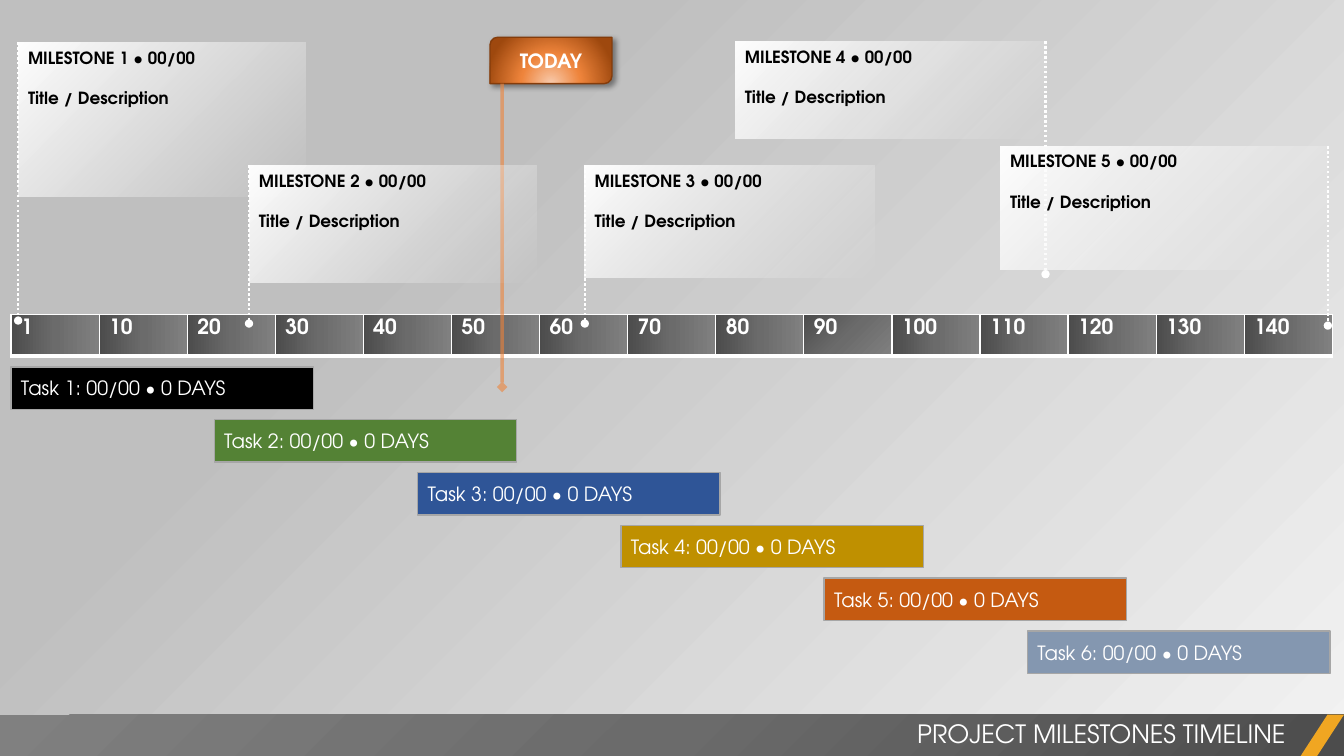
import pptx
import pptx.util
import pptx.oxml
import pptx.oxml.ns
import pptx.dml.color
import pptx.enum.dml
import pptx.enum.shapes
import pptx.enum.text

Inches = pptx.util.Inches
Pt = pptx.util.Pt
qn = pptx.oxml.ns.qn
SHAPE = pptx.enum.shapes.MSO_SHAPE
ALIGN = pptx.enum.text.PP_ALIGN
ANCHOR = pptx.enum.text.MSO_ANCHOR
DASH = pptx.enum.dml.MSO_LINE

FONT = "TeX Gyre Adventor"
NS = pptx.oxml.ns.nsdecls("a")
DARK = [(0, "4C4C4C", 100), (50, "6B6B6B", 100), (100, "808080", 100)]
FADE = [(0, "F2F2F2", 0), (100, "FFFFFF", 100)]


def rgb(value):
    return pptx.dml.color.RGBColor.from_string(value)


def xml(markup):
    """Element from markup whose root tag is left open for the namespace."""
    tag, rest = markup.split("|", 1)
    return pptx.oxml.parse_xml(f"<{tag} {NS}{rest}")


def gradient(owner, stops, angle=0, center=None):
    """Replace the empty fill of owner by a linear or circular gradient."""
    gs = "".join(
        f'<a:gs pos="{pos * 1000}"><a:srgbClr val="{color}">'
        f'<a:alpha val="{alpha * 1000}"/></a:srgbClr></a:gs>'
        for pos, color, alpha in stops)
    if center:
        sides = " ".join(f'{side}="{v * 1000}"' for side, v in zip("ltrb", center))
        way = f'<a:path path="circle"><a:fillToRect {sides}/></a:path>'
    else:
        way = f'<a:lin ang="{angle * 60000}" scaled="0"/>'
    empty = next(owner.iter(qn("a:noFill")))
    empty.getparent().replace(
        empty, xml(f"a:gradFill|><a:gsLst>{gs}</a:gsLst>{way}</a:gradFill>"))


def add_box(s, kind, x, y, w, h, fill=None, line=None):
    sp = s.shapes.add_shape(kind, Inches(x), Inches(y), Inches(w), Inches(h))
    sp.shadow.inherit = False
    if fill:
        sp.fill.solid()
        sp.fill.fore_color.rgb = rgb(fill)
    else:
        sp.fill.background()
    if line:
        sp.line.color.rgb = rgb(line)
        sp.line.width = Pt(1)
    else:
        sp.line.fill.background()
    return sp


def add_line(s, x, y1, y2, color, width, end, dash=None, alpha=100):
    cx = s.shapes.add_connector(pptx.enum.shapes.MSO_CONNECTOR.STRAIGHT,
                                Inches(x), Inches(y1), Inches(x), Inches(y2))
    cx.line.color.rgb = rgb(color)
    cx.line.width = Pt(width)
    if dash:
        cx.line.dash_style = dash
    next(cx.element.iter(qn("a:srgbClr"))).append(
        xml(f'a:alpha| val="{alpha * 1000}"/>'))
    next(cx.element.iter(qn("a:ln"))).append(xml(f'a:tailEnd| type="{end}"/>'))
    cx.element.spPr.append(xml("a:effectLst|/>"))


def write(tf, lines, size, color, bold=False, align=ALIGN.LEFT, gap=0):
    tf.word_wrap = True
    for i, text in enumerate(lines):
        p = tf.add_paragraph() if i else tf.paragraphs[0]
        p.alignment = align
        if i:
            p.space_before = Pt(gap)
        r = p.add_run()
        r.text = text
        r.font.name = FONT
        r.font.size = Pt(size)
        r.font.bold = bold
        r.font.color.rgb = rgb(color)


def add_text(s, x, y, w, h, *args, **kwargs):
    tb = s.shapes.add_textbox(Inches(x), Inches(y), Inches(w), Inches(h))
    write(tb.text_frame, *args, **kwargs)


def add_tasks(s, x, y, w, h):
    """Staircase of task bars inside the given box."""
    colors = ["000000", "548235", "2F5597", "BF9000", "C55A11", "8497B0"]
    bar_w, bar_h = 3, 0.42
    dx, dy = (w - bar_w) / (len(colors) - 1), (h - bar_h) / (len(colors) - 1)
    for i, color in enumerate(colors):
        sp = add_box(s, SHAPE.RECTANGLE, x + i * dx, y + i * dy,
                     bar_w, bar_h, color, "A6A6A6")
        sp.text_frame.vertical_anchor = ANCHOR.MIDDLE
        write(sp.text_frame, [f"Task {i + 1}: 00/00 • 0 DAYS"], 14, "FFFFFF")


def add_scale(s, x, y, w, h):
    """Day scale as a one-row table."""
    days = [1, *range(10, 150, 10)]
    frame = s.shapes.add_table(1, len(days), Inches(x), Inches(y),
                               Inches(w), Inches(h))
    table = frame.table
    table.first_row = table.horz_banding = False
    for col, day in zip(table.columns, days):
        col.width = Inches(w / len(days))
    for cell, day in zip(table.rows[0].cells, days):
        write(cell.text_frame, [str(day)], 15, "FFFFFF", bold=True)
        cell.fill.background()
    for tc_pr, day in zip(frame.element.iter(qn("a:tcPr")), days):
        gradient(tc_pr, DARK, 45 if day == 90 else 0)
        for i, (side, width) in enumerate(zip("LRTB", (1, 1, 1, 3))):
            tc_pr.insert(i, xml(
                f'a:ln{side}| w="{width * 12700}"><a:solidFill>'
                f'<a:srgbClr val="FFFFFF"/></a:solidFill></a:ln{side}>'))


def add_today(s, x, y, w, h):
    """Flag for the current day with its pointer."""
    sp = add_box(s, SHAPE.ROUND_2_DIAG_RECTANGLE, x, y, w, h, line="843C0B")
    gradient(sp.element, [(0, "F8CBAD", 100), (46, "EE843B", 100),
                          (100, "9E480E", 100)], center=(50, 130, 50, -30))
    next(sp.element.iter(qn("a:effectLst"))).append(xml(
        f'a:outerShdw| blurRad="{Pt(4)}" dist="{Pt(3)}" dir="2700000" algn="tl">'
        '<a:srgbClr val="000000"><a:alpha val="40000"/></a:srgbClr></a:outerShdw>'))
    sp.text_frame.vertical_anchor = ANCHOR.MIDDLE
    write(sp.text_frame, ["TODAY"], 14, "FFFFFF", bold=True, align=ALIGN.CENTER)
    add_line(s, x + 0.12, y + h, 3.84, "EE843B", 2.5, "diamond", alpha=60)


def add_milestone(s, number, x, y, w, h, line_x, line_end):
    """Fading card with its dotted marker line."""
    card = add_box(s, SHAPE.ROUNDED_RECTANGLE, x, y, w, h)
    card.adjustments[0] = 0
    gradient(card.element, FADE, 225)
    add_text(s, x, y, w, 0.71,
             [f"MILESTONE {number} • 00/00", "Title / Description"],
             12, "000000", bold=True, gap=14.4)
    add_line(s, line_x, y, line_end, "FFFFFF", 1.75, "oval", DASH.ROUND_DOT)


def add_footer(s, x, y, w, h):
    """Title bar with its slanted accent."""
    bar = add_box(s, SHAPE.RECTANGLE, x, y, w, h)
    gradient(bar.element, DARK, center=(100, 100, 0, 0))
    accent = add_box(s, SHAPE.PARALLELOGRAM, x + w - 0.43, y, 0.43, h, "F0A622")
    accent.adjustments[0] = 0.65
    add_text(s, x + w - 8.08, y - 0.01, 7.6, 0.4,
             ["PROJECT MILESTONES TIMELINE"], 18, "FFFFFF", align=ALIGN.RIGHT)


def build_timeline(prs):
    s = prs.slides.add_slide(prs.slide_layouts[6])
    s.background.fill.background()
    gradient(s.element, [(0, "F2F2F2", 100), (70, "BFBFBF", 100)], 225)

    add_tasks(s, 0.11, 3.64, 13.08, 3.04)
    add_scale(s, 0.11, 3.12, 13.11, 0.41)
    add_today(s, 4.86, 0.37, 1.21, 0.46)
    # Card box, then marker position and lower end
    milestones = [
        (0.18, 0.42, 2.85, 1.53, 0.18, 3.18),
        (2.47, 1.64, 2.85, 1.16, 2.47, 3.21),
        (5.8, 1.64, 2.87, 1.11, 5.8, 3.21),
        (7.29, 0.41, 3.09, 0.96, 10.37, 2.72),
        (9.92, 1.45, 3.25, 1.22, 13.17, 3.23),
    ]
    for number, place in enumerate(milestones, 1):
        add_milestone(s, number, *place)
    add_footer(s, 0, 7.09, 13.33, 0.41)


def main():
    prs = pptx.Presentation()
    prs.slide_width, prs.slide_height = Inches(13.33), Inches(7.5)
    build_timeline(prs)
    prs.save("out.pptx")


if __name__ == "__main__":
    main()
